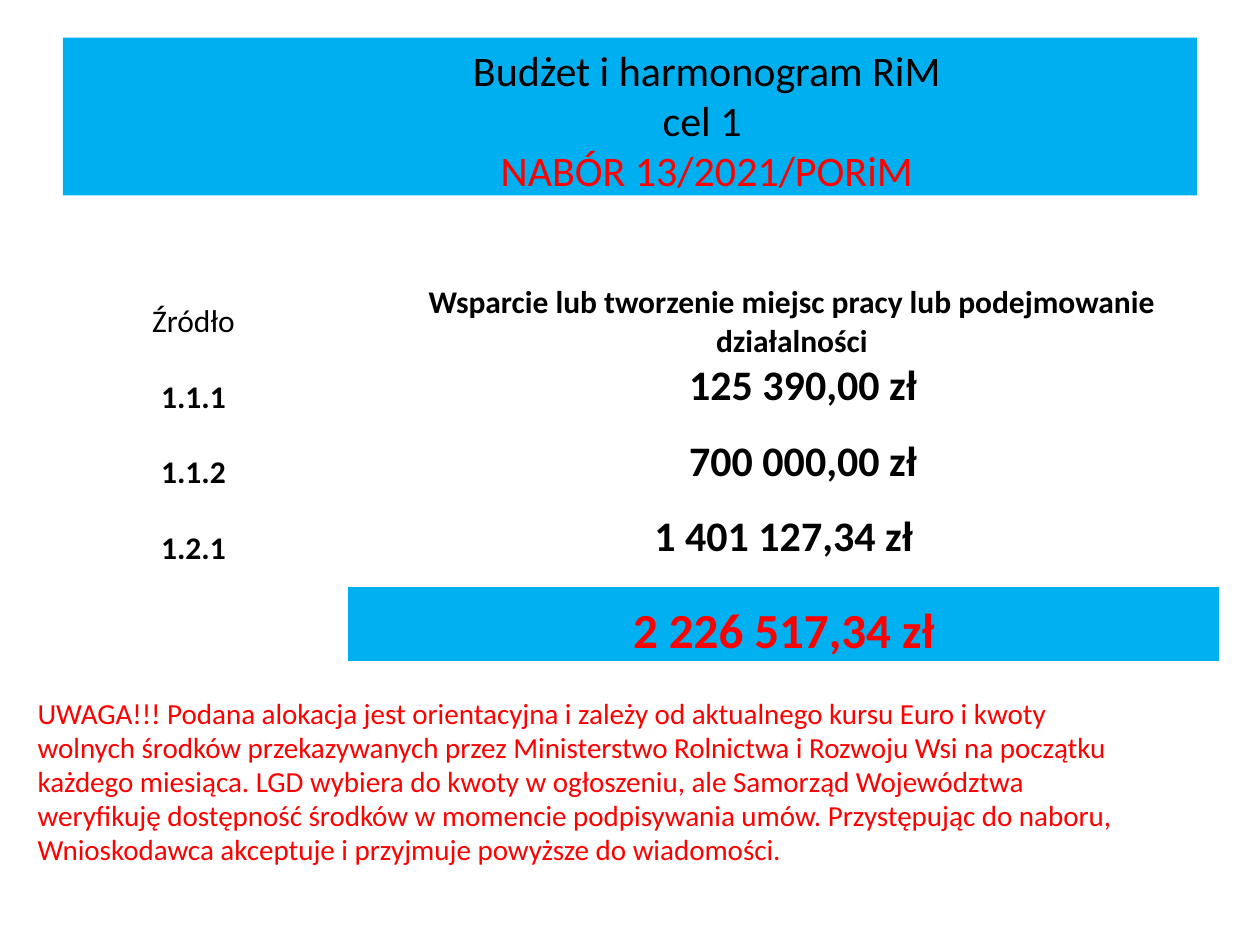
from pptx import Presentation
from pptx.dml.color import RGBColor
from pptx.enum.shapes import MSO_SHAPE
from pptx.enum.text import MSO_ANCHOR, PP_ALIGN
from pptx.util import Cm, Pt

RECTANGLE = MSO_SHAPE.RECTANGLE
TOP, MIDDLE, BOTTOM = MSO_ANCHOR.TOP, MSO_ANCHOR.MIDDLE, MSO_ANCHOR.BOTTOM
LEFT, CENTER = PP_ALIGN.LEFT, PP_ALIGN.CENTER

COLORS = {"band": "00AFEF", "total": "00B0F0", "text": "000000", "alert": "FF0000"}


def write(paragraph, text, size, color="text", bold=False, align=CENTER):
    paragraph.alignment = align
    run = paragraph.add_run()
    run.text = text
    run.font.name = "Calibri"
    run.font.size = Pt(size)
    run.font.bold = bold
    run.font.color.rgb = RGBColor.from_string(COLORS[color])


def set_margins(target, left, top, right, bottom):
    """Set the inner margins of a cell or text frame, in centimetres."""
    target.margin_left, target.margin_top = Cm(left), Cm(top)
    target.margin_right, target.margin_bottom = Cm(right), Cm(bottom)


presentation = Presentation()
presentation.slide_width, presentation.slide_height = Cm(25.4), Cm(19.05)
slide = presentation.slides.add_slide(presentation.slide_layouts[6])

# Title band
band = slide.shapes.add_shape(RECTANGLE, Cm(1.27), Cm(0.76), Cm(22.86), Cm(3.18))
band.shadow.inherit = False
band.fill.solid()
band.fill.fore_color.rgb = RGBColor.from_string(COLORS["band"])
band.line.fill.background()

title = slide.shapes.add_textbox(Cm(4.8), Cm(0.89), Cm(18.9), Cm(3.07)).text_frame
title.word_wrap = True
set_margins(title, 0, 0, 0, 0)
title_lines = [
    ("Budżet i harmonogram RiM", "text"),
    ("cel 1 ", "text"),
    ("NABÓR 13/2021/PORiM", "alert"),
]
for index, (text, color) in enumerate(title_lines):
    paragraph = title.add_paragraph() if index else title.paragraphs[0]
    write(paragraph, text, 24, color)

# Budget table: source, amount, amount size, left margin of the amount
rows = [
    ("Źródło", "Wsparcie lub tworzenie miejsc pracy lub podejmowanie działalności", 18, 0.33),
    ("1.1.1", "125 390,00 zł", 24, 0.81),
    ("1.1.2", "700 000,00 zł", 24, 0.81),
    ("1.2.1", "1 401 127,34 zł", 24, 0.03),
    ("", "2 226 517,34 zł", 28, 0.03),
]
table = slide.shapes.add_table(len(rows), 2, Cm(0.79), Cm(5.72), Cm(23.8), Cm(7.6)).table
table.first_row = table.horz_banding = False
table.columns[0].width, table.columns[1].width = Cm(6.22), Cm(17.58)

for index, (source, amount, size, left) in enumerate(rows):
    is_header, is_total = index == 0, index == len(rows) - 1
    table.rows[index].height = Cm(1.52)
    source_cell, amount_cell = table.cell(index, 0), table.cell(index, 1)

    source_cell.fill.background()
    source_cell.vertical_anchor = TOP if is_header else MIDDLE
    if source:
        set_margins(source_cell, 0.38, 0.38, 0.38, 0.38)
        write(source_cell.text_frame.paragraphs[0], source, 18, bold=not is_header)

    amount_cell.vertical_anchor = BOTTOM if is_total else TOP
    edge = 0 if is_header else 0.03
    set_margins(amount_cell, left, edge, edge, 0)
    color = "alert" if is_total else "text"
    write(amount_cell.text_frame.paragraphs[0], amount, size, color, bold=True)
    if is_total:
        amount_cell.fill.solid()
        amount_cell.fill.fore_color.rgb = RGBColor.from_string(COLORS["total"])
    else:
        amount_cell.fill.background()

# Note
note = slide.shapes.add_textbox(Cm(0.51), Cm(13.92), Cm(22.86), Cm(4.19)).text_frame
note.word_wrap = True
note_paragraph = note.paragraphs[0]
note_paragraph.space_before = Pt(3)
note_paragraph.line_spacing = 0.98
write(
    note_paragraph,
    "UWAGA!!! Podana alokacja jest orientacyjna i zależy od aktualnego kursu Euro i kwoty "
    "wolnych środków przekazywanych przez Ministerstwo Rolnictwa i Rozwoju Wsi na początku "
    "każdego miesiąca. LGD wybiera do kwoty w ogłoszeniu, ale Samorząd Województwa "
    "weryfikuję dostępność środków w momencie podpisywania umów. Przystępując do naboru, "
    "Wnioskodawca akceptuje i przyjmuje powyższe do wiadomości.",
    16.6,
    "alert",
    align=LEFT,
)

presentation.save("out.pptx")
